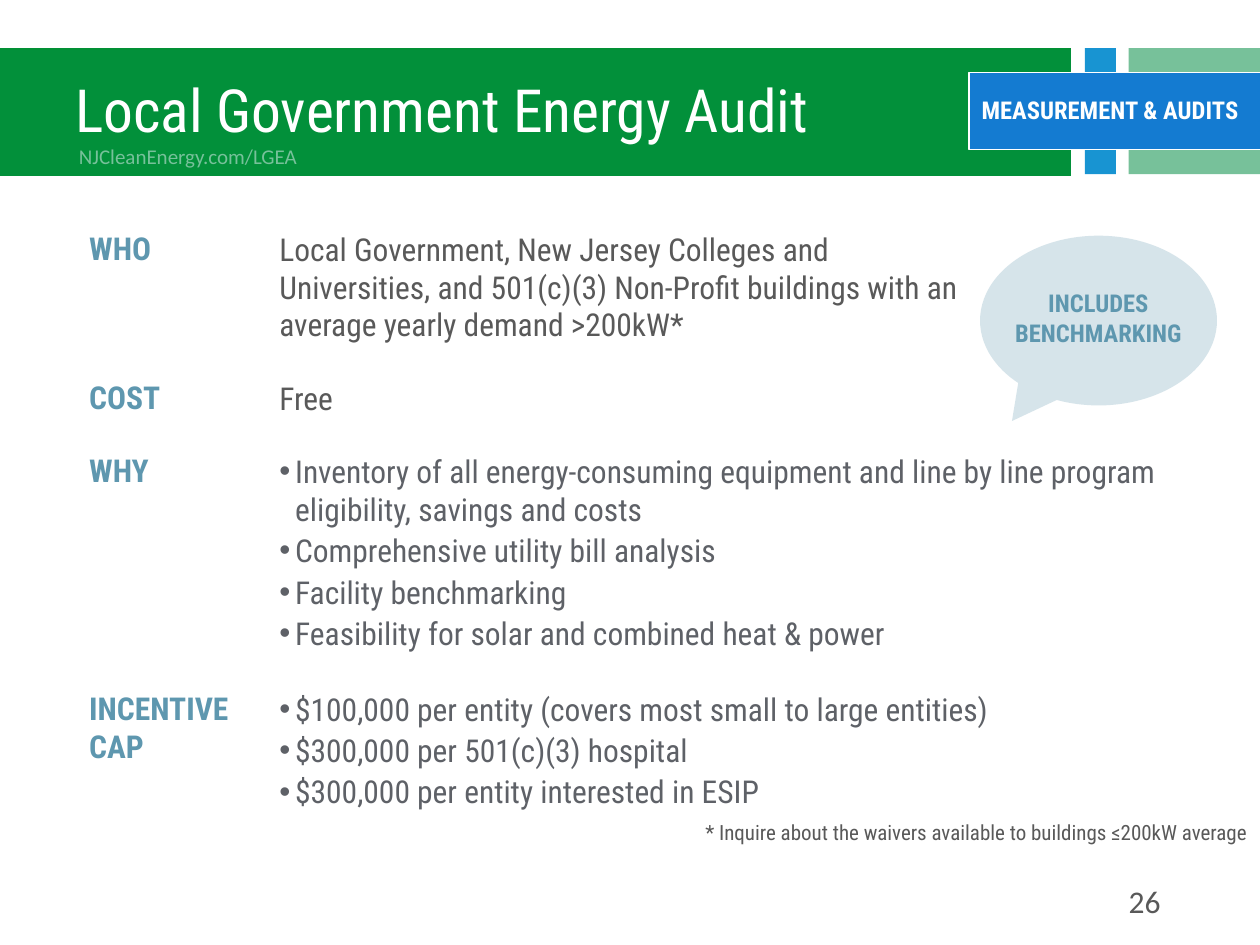
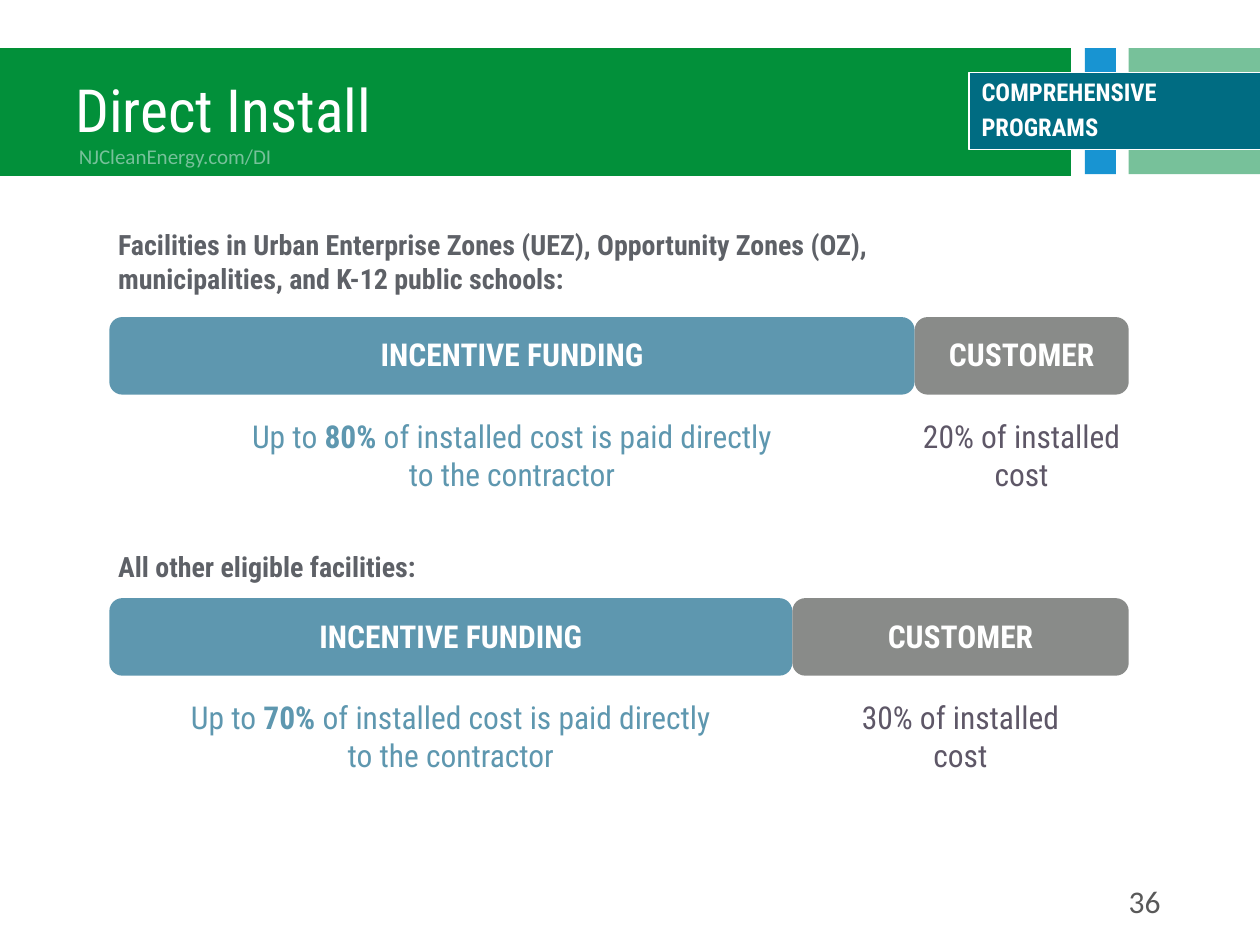
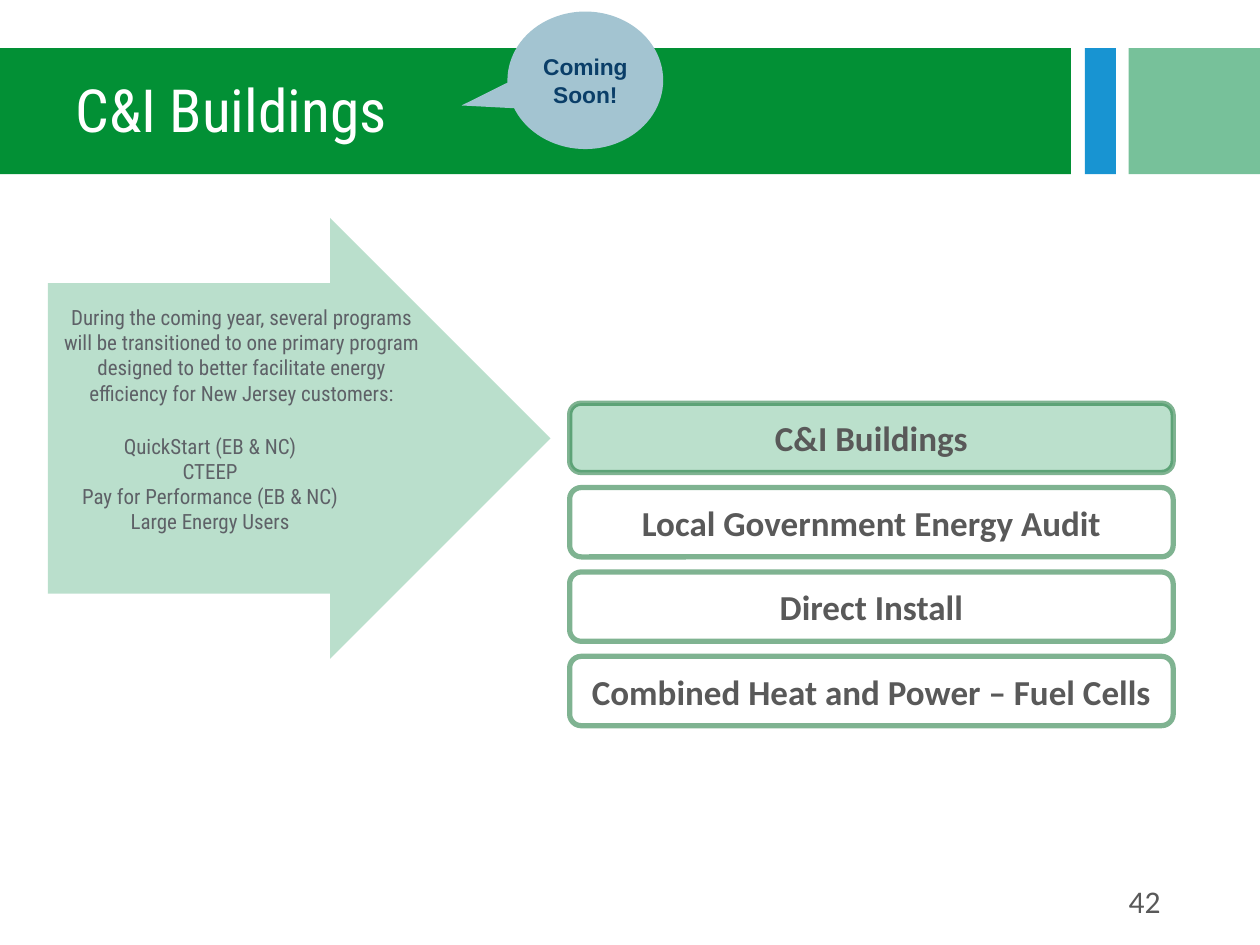
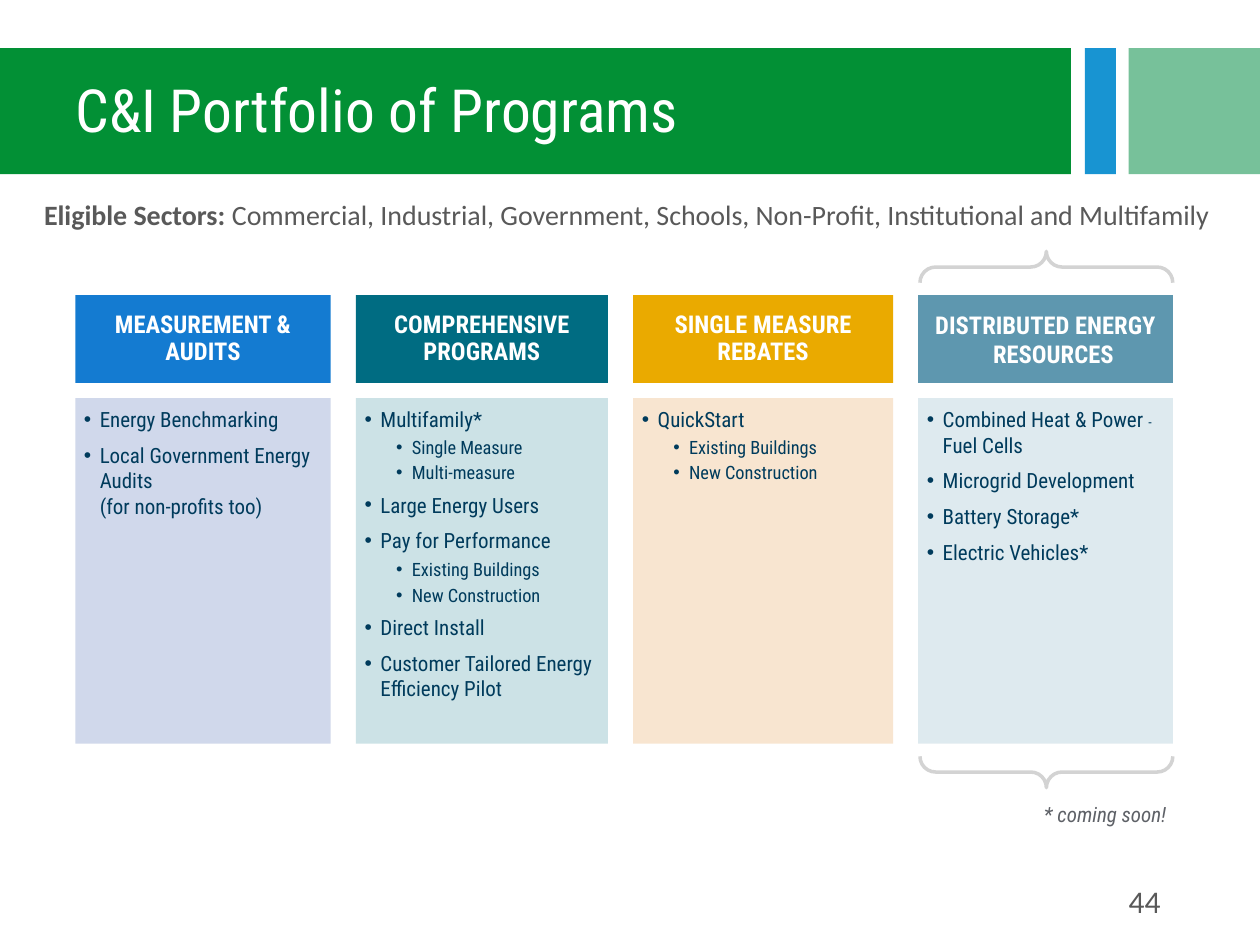
import collections
import dataclasses

import lxml.etree
import pptx
import pptx.dml.color
import pptx.enum.shapes
import pptx.enum.text
import pptx.oxml.ns
import pptx.util

Pt = pptx.util.Pt
SHAPE = pptx.enum.shapes.MSO_SHAPE
ALIGN = pptx.enum.text.PP_ALIGN
ANCHOR = pptx.enum.text.MSO_ANCHOR
qn = pptx.oxml.ns.qn

COLORS = {
    "band": "029035", "title_band": "02903A", "stripe": "1894D2", "mint": "77C19A",
    "white": "FFFFFF", "text": "595959", "slate": "5E6167", "plum": "5E5767",
    "steel": "5E97AF", "gray": "898B89", "navy": "003B5C", "callout": "A3C4D1",
    "callout_text": "0A3E68", "outline": "016824", "pale_mint": "BBE0CC",
    "brace": "D3D3D3", "audits": "147BD1", "programs": "006C82", "rebates": "EAAA00",
    "audits_pale": "D0D8EB", "programs_pale": "CCE2E6", "rebates_pale": "F8E5D0",
}
CONDENSED = "Roboto Condensed"

Box = collections.namedtuple("Box", "left top width height")
Run = collections.namedtuple("Run", "text bold size", defaults=(None, None))


@dataclasses.dataclass
class Para:
    content: object
    size: float = 18
    color: str = "text"
    font: str = CONDENSED
    bold: bool = False
    italic: bool = False
    align: object = ALIGN.LEFT
    margin: float = 0
    indent: float = 0
    bullet: bool = False
    level: int = 0
    line: float = 1.0
    before: float = 0
    after: float = 0


def rgb(color):
    return pptx.dml.color.RGBColor.from_string(COLORS[color])


def paint(fill, color, opacity=100):
    fill.solid()
    fill.fore_color.rgb = rgb(color)
    if opacity < 100:
        for tone in fill._xPr.iter(qn("a:srgbClr")):
            lxml.etree.SubElement(tone, qn("a:alpha"), val=str(opacity * 1000))


def write(shape, paras, inset=(7.2, 3.6, 7.2, 3.6), anchor=ANCHOR.TOP):
    frame = shape.text_frame
    frame.word_wrap = True
    frame.vertical_anchor = anchor
    frame.margin_left, frame.margin_top, frame.margin_right, frame.margin_bottom = map(Pt, inset)
    for index, para in enumerate(paras):
        p = frame.paragraphs[0] if index == 0 else frame.add_paragraph()
        p.level = para.level
        props = p._p.get_or_add_pPr()
        props.set("marL", str(Pt(para.margin)))
        props.set("indent", str(Pt(para.indent)))
        if para.bullet:
            lxml.etree.SubElement(props, qn("a:buFont"), typeface="Arial")
            lxml.etree.SubElement(props, qn("a:buChar"), char="•")
        p.alignment = para.align
        p.line_spacing = para.line
        p.space_before = Pt(para.before if index else 0)
        p.space_after = Pt(para.after)
        runs = [Run(para.content)] if isinstance(para.content, str) else para.content
        for part in runs:
            if part.text == "\n":
                p.add_line_break()
                continue
            run = p.add_run()
            run.text = part.text
            run.font.name = para.font
            run.font.size = Pt(part.size or para.size)
            run.font.bold = para.bold if part.bold is None else part.bold
            run.font.italic = para.italic
            run.font.color.rgb = rgb(para.color)


def add_text(slide, box, *paras):
    write(slide.shapes.add_textbox(*map(Pt, box)), paras)


def add_block(slide, kind, box, fill=None, opacity=100, line=None, line_width=1, line_opacity=100):
    block = slide.shapes.add_shape(kind, *map(Pt, box))
    block.shadow.inherit = False
    if fill:
        paint(block.fill, fill, opacity)
    else:
        block.fill.background()
    if line:
        block.line.width = Pt(line_width)
        paint(block.line.fill, line, line_opacity)
    else:
        block.line.fill.background()
    return block


def bullet(content, **options):
    settings = dict(color="slate", margin=9, indent=-9, bullet=True, after=2)
    return Para(content, **{**settings, **options})


def header(slide, box, title, number, url=None):
    add_block(slide, SHAPE.RECTANGLE, Box(box.left + 620, box.top, 17.7, box.height), "stripe")
    add_block(slide, SHAPE.RECTANGLE, Box(box.left + 645, box.top, 75, box.height), "mint")
    band = Box(box.left, box.top, 612, box.height)
    add_block(slide, SHAPE.RECTANGLE, band, "band")
    title_box = band._replace(top=box.top + 1)
    heading = Para(title, 34, "white", margin=36, line=0.9)
    if url:
        title_band = add_block(slide, SHAPE.RECTANGLE, title_box, "title_band")
        add_text(slide, Box(box.left + 38, box.top + 51, 291, 21.6), Para(url, 12, "mint", "Calibri"))
    else:
        title_band = slide.shapes.add_textbox(*map(Pt, title_box))
    write(title_band, [heading], anchor=ANCHOR.MIDDLE)
    add_text(slide, Box(508.3, 500.4, 162, 28.8), Para(number, 18, font="Calibri", align=ALIGN.RIGHT))


def category_tag(slide, box, color, lines):
    tag = add_block(slide, SHAPE.RECTANGLE, box, color, line="white")
    write(tag, [Para(text, 14, "white", bold=True, line=0.9, after=5) for text in lines],
          (7.2, 4.3, 7.2, 4.3), ANCHOR.MIDDLE)


def fact_rows(slide, box, rows):
    for offset, label, width, paras in rows:
        top = box.top + offset
        add_text(slide, Box(box.left, top, 122, 29), Para(label, color="steel", bold=True))
        add_text(slide, Box(box.left + 108.7, top + 0.4, width, 29 * len(paras)), *paras)


def benchmarking_callout(slide, box):
    bubble = add_block(slide, SHAPE.OVAL_CALLOUT, box, "steel", 25)
    bubble.adjustments[0], bubble.adjustments[1] = -0.365, 0.592
    add_text(slide, Box(box.left - 4.3, box.top + 26.6, box.width + 8.6, 41),
             Para("INCLUDES BENCHMARKING", 14, "steel", bold=True, align=ALIGN.CENTER))


def funding_split(slide, box, share, rise, heading, percent, rest):
    add_text(slide, Box(box.left - 2, box.top - rise, 448, rise - 6),
             Para(heading, 16, "slate", bold=True, after=2))
    split = box.width * share
    incentive_caption = [Run("Up to "), Run(percent, True),
                         Run(" of installed cost is paid directly to the contractor")]
    parts = [
        (box.left, split, "steel", "INCENTIVE FUNDING", 326, incentive_caption, "steel"),
        (box.left + split, box.width - split, "gray", "CUSTOMER", 134.6,
         f"{rest} of installed cost", "plum"),
    ]
    for left, width, fill, *_ in parts:
        add_block(slide, SHAPE.ROUNDED_RECTANGLE, Box(left, box.top, width, box.height), fill)
    for left, width, _, label, text_width, caption, color in parts:
        add_text(slide, Box(left + (width - text_width) / 2, box.top + 7, text_width, 98.6),
                 Para(label, color="white", bold=True, align=ALIGN.CENTER, after=25),
                 Para(caption, color=color, align=ALIGN.CENTER, after=2))


def coming_soon_callout(slide, box):
    bubble = add_block(slide, SHAPE.OVAL_CALLOUT, box, "callout")
    bubble.adjustments[0], bubble.adjustments[1] = -0.795, 0.183
    write(bubble, [Para("Coming Soon!", 13, "callout_text", "Arial", True, align=ALIGN.CENTER)],
          anchor=ANCHOR.MIDDLE)


def transition_arrow(slide, box, message, programs):
    arrow = add_block(slide, SHAPE.RIGHT_ARROW, box, "mint", 50)
    arrow.adjustments[0], arrow.adjustments[1] = 0.704, 0.5
    add_text(slide, Box(box.left - 36.7, box.top + 46, 259, 169),
             Para(message, 12, "slate", align=ALIGN.CENTER, margin=36, after=16),
             *[Para(name, 12, "slate", align=ALIGN.CENTER) for name in programs])


def program_stack(slide, box, programs):
    gap = 8.6
    height = (box.height - gap * (len(programs) - 1)) / len(programs)
    for index, name in enumerate(programs):
        place = Box(box.left, box.top + index * (height + gap), box.width, height)
        card = add_block(slide, SHAPE.ROUNDED_RECTANGLE, place, None if index else "pale_mint",
                         line="outline", line_width=3, line_opacity=50)
        write(card, [Para(name, 20, font="Calibri", bold=True, align=ALIGN.CENTER)],
              anchor=ANCHOR.MIDDLE)


def portfolio_column(slide, box, title, color, pale, opacity, items):
    body = add_block(slide, SHAPE.RECTANGLE, Box(box.left, box.top + 59, box.width, box.height - 59),
                     pale, opacity)
    write(body, items, (5, 5, 6.5, 7.2))
    head = add_block(slide, SHAPE.RECTANGLE, Box(box.left, box.top, box.width, 50.2), color)
    write(head, [title], (7, 4, 7, 4), ANCHOR.MIDDLE)


def coming_soon_brace(slide, box):
    turned = Box(box.left + (box.width - box.height) / 2, box.top + (box.height - box.width) / 2,
                 box.height, box.width)
    brace = add_block(slide, SHAPE.DOUBLE_BRACE, turned, line="brace", line_width=2)
    brace.rotation = 270
    brace.adjustments[0] = 0.062
    add_text(slide, Box(box.left + box.width - 222, box.top + box.height + 4.4, 225.4, 21.6),
             Para("* coming soon!", 12, "slate", italic=True, align=ALIGN.RIGHT))


def column_title(text):
    return Para(text, 14, "white", bold=True, align=ALIGN.CENTER, line=0.9, after=5)


def item(content, spacing=3):
    return bullet(content, size=12, color="navy", before=spacing, after=spacing)


def lead(content):
    return bullet(content, size=12, color="navy")


def subitem(content):
    return bullet(content, size=10.5, color="navy", margin=27, level=1)


HEADER = Box(0, 27.5, 720, 72)
TAG = Box(553.8, 41.5, 172.8, 44)


def audit_slide(slide):
    header(slide, HEADER, "Local Government Energy Audit", "26", "NJCleanEnergy.com/LGEA")
    fact_rows(slide, Box(43.9, 127.4, 660, 340), [
        (0, "WHO", 407.5, [Para("Local Government, New Jersey Colleges and Universities, and 501(c)(3) "
                                "Non-Profit buildings with an average yearly demand >200kW*")]),
        (85.2, "COST", 543, [Para("Free")]),
        (127, "WHY", 551.5, [
            bullet("Inventory of all energy-consuming equipment and line by line program "
                   "eligibility, savings and costs"),
            bullet("Comprehensive utility bill analysis"),
            bullet("Facility benchmarking"),
            bullet("Feasibility for solar and combined heat & power")]),
        (262.8, "INCENTIVE CAP", 551.5, [
            bullet("$100,000 per entity (covers most small to large entities)"),
            bullet("$300,000 per 501(c)(3) hospital"),
            bullet("$300,000 per entity interested in ESIP")]),
    ])
    benchmarking_callout(slide, Box(560, 134.7, 135.4, 97))
    add_text(slide, Box(207.4, 465, 512.6, 21.6),
             Para("* Inquire about the waivers available to buildings ≤200kW average", 12,
                  align=ALIGN.RIGHT))
    category_tag(slide, TAG, "audits", ["MEASUREMENT & AUDITS"])


def install_slide(slide):
    header(slide, HEADER, "Direct Install", "36", "NJCleanEnergy.com/DI")
    bar = Box(62.5, 181.2, 582.5, 44.3)
    funding_split(slide, bar, 0.79, 54.5,
                  "Facilities in Urban Enterprise Zones (UEZ), Opportunity Zones (OZ), "
                  "municipalities, and K-12 public schools:", "80%", "20%")
    funding_split(slide, bar._replace(top=341.8), 0.67, 31.5,
                  "All other eligible facilities:", "70%", "30%")
    category_tag(slide, TAG, "programs", ["COMPREHENSIVE", "PROGRAMS"])


def buildings_slide(slide):
    header(slide, HEADER, "C&I Buildings", "42")
    coming_soon_callout(slide, Box(290, 6.6, 89, 78.6))
    transition_arrow(
        slide, Box(27.3, 124.5, 287.3, 252),
        "During the coming year, several programs will be transitioned to one primary program "
        "designed to better facilitate energy efficiency for New Jersey customers:",
        ["QuickStart (EB & NC)", "CTEEP", "Pay for Performance (EB & NC)", "Large Energy Users"])
    program_stack(slide, Box(325.5, 230.4, 344.9, 184.3),
                  ["C&I Buildings", "Local Government Energy Audit", "Direct Install",
                   "Combined Heat and Power – Fuel Cells"])


def portfolio_slide(slide):
    header(slide, HEADER, "C&I Portfolio of Programs", "44")
    add_text(slide, Box(-0.7, 109.4, 718, 26.6),
             Para([Run("Eligible Sectors: ", True),
                   Run("Commercial, Industrial, Government, Schools, Non-Profit, Institutional "
                       "and Multifamily")], 16, font="Calibri", align=ALIGN.CENTER))
    columns = [
        (146, column_title("MEASUREMENT & AUDITS"), "audits", "audits_pale", 100, [
            item("Energy Benchmarking"),
            item([Run("Local Government Energy Audits"), Run("\n"), Run("(for non-profits too)")])]),
        (144, column_title("COMPREHENSIVE PROGRAMS"), "programs", "programs_pale", 100, [
            lead("Multifamily*"), subitem("Single Measure"), subitem("Multi-measure"),
            item("Large Energy Users"), item("Pay for Performance"),
            subitem("Existing Buildings"), subitem("New Construction"),
            item("Direct Install"), item("Customer Tailored Energy Efficiency Pilot")]),
        (148.5, column_title("SINGLE MEASURE REBATES"), "rebates", "rebates_pale", 100, [
            lead("QuickStart"), subitem("Existing Buildings"), subitem("New Construction")]),
        (145.5, Para("DISTRIBUTED ENERGY RESOURCES", 14, "white", bold=True, align=ALIGN.CENTER,
                     margin=9, indent=-9, after=2), "steel", "steel", 20, [
            item([Run("Combined Heat & Power "), Run("- ", size=8), Run("Fuel Cells")]),
            item("Microgrid Development"), item("Battery Storage*"), item("Electric Vehicles*")]),
    ]
    left, gap = 43, 14.4
    for width, *content in columns:
        column = Box(left, 168.6, width, 256.4)
        portfolio_column(slide, column, *content)
        left += width + gap
    coming_soon_brace(slide, Box(column.left + 1, column.top - 25, column.width - 1, 306.5))


def main():
    deck = pptx.Presentation()
    deck.slide_width, deck.slide_height = Pt(720), Pt(540)
    for build in (audit_slide, install_slide, buildings_slide, portfolio_slide):
        build(deck.slides.add_slide(deck.slide_layouts[6]))
    deck.save("out.pptx")


if __name__ == "__main__":
    main()
